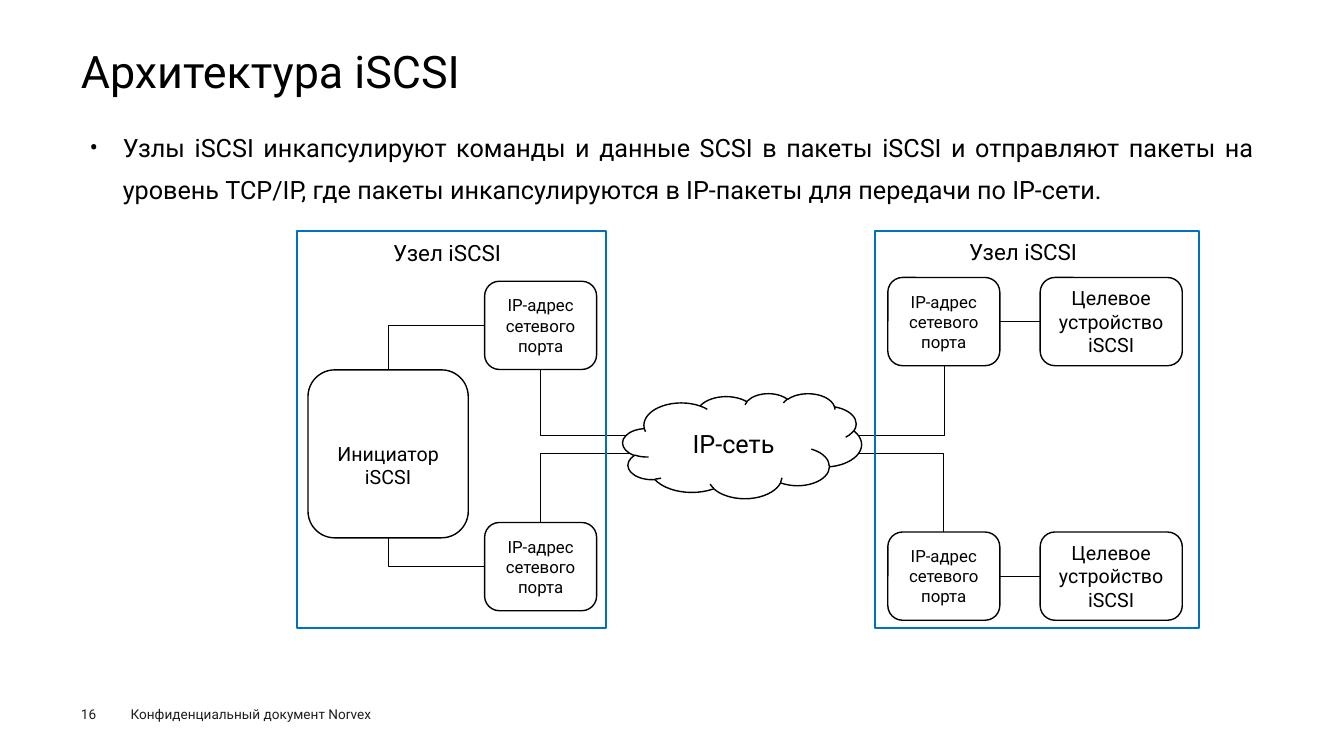
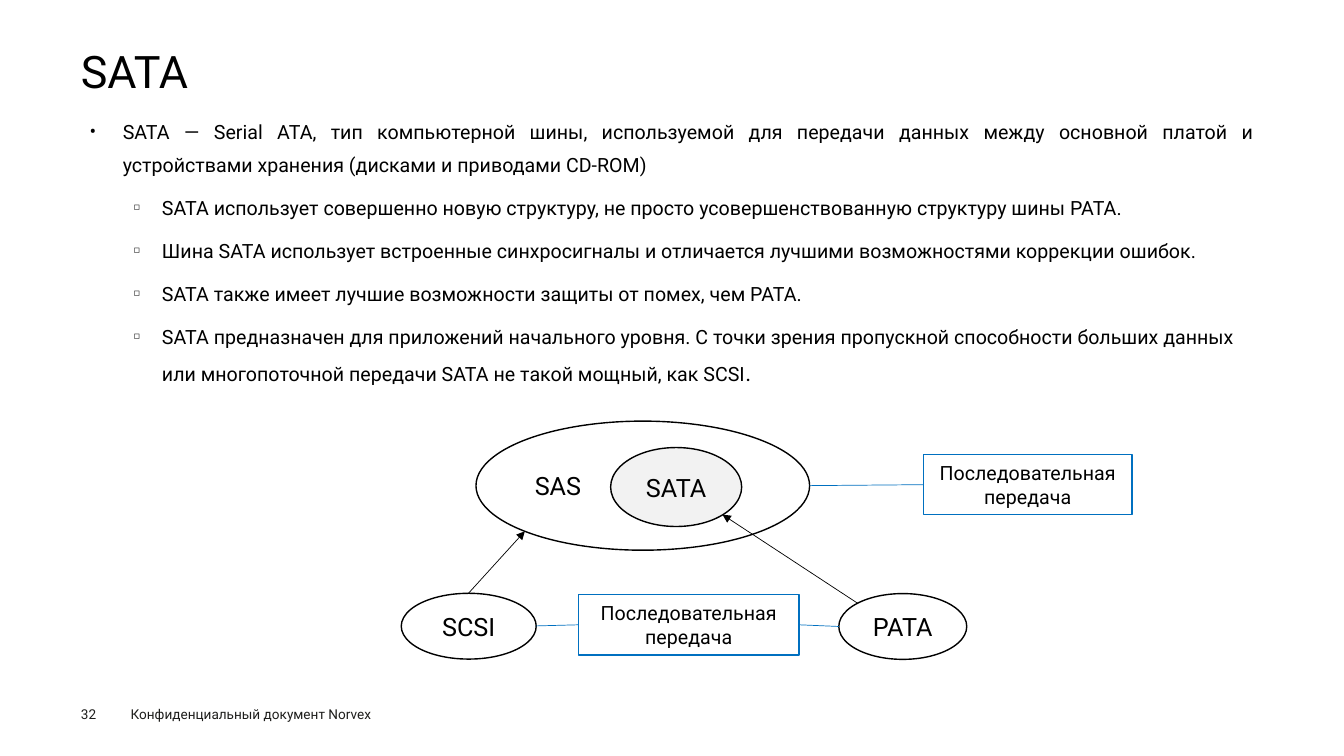
from lxml.etree import SubElement
from pptx import Presentation
from pptx.dml.color import RGBColor
from pptx.enum.shapes import MSO_CONNECTOR as Connector, MSO_SHAPE as Preset
from pptx.enum.text import MSO_ANCHOR as Anchor, PP_ALIGN as Align
from pptx.oxml.ns import qn
from pptx.util import Pt

FONT = "Roboto"
BLACK, BLUE, WHITE, PALE, FOOTER_INK = "000000", "0070C0", "FFFFFF", "F2F2F2", "1D1D1B"
FOOTER = "Конфиденциальный документ Norvex"
# Bullet levels: left margin, hanging indent, character, size in %, space before, alignment
LEVELS = [
    (23.6, 23.6, "•", 100, 7.9, Align.JUSTIFY),
    (51.6, 20, "◻", 50, 7.2, Align.LEFT),
]


def color(value):
    return RGBColor.from_string(value)


class Slides:
    """Holds the deck style and the current slide."""

    def __init__(self):
        self.deck = Presentation()
        self.deck.slide_width, self.deck.slide_height = Pt(960), Pt(540)
        self.page = None

    def style(self, span, size, ink=BLACK):
        span.font.name, span.font.size = FONT, Pt(size)
        span.font.color.rgb = color(ink)

    def fill_text(self, frame, text, size, ink=BLACK, align=Align.LEFT,
                  anchor=Anchor.TOP, insets=(7.2, 3.6, 7.2, 3.6), wrap=True):
        frame.text = text
        frame.word_wrap, frame.vertical_anchor = wrap, anchor
        (frame.margin_left, frame.margin_top,
         frame.margin_right, frame.margin_bottom) = map(Pt, insets)
        for para in frame.paragraphs:
            para.alignment = align
            for span in para.runs:
                self.style(span, size, ink)

    def new_page(self, title, number):
        self.page = self.deck.slides.add_slide(self.deck.slide_layouts[5])
        head = self.page.shapes.title
        head.left, head.top, head.width, head.height = map(Pt, (57.8, 35.3, 844.5, 39))
        self.fill_text(head.text_frame, title, 32, insets=(0,) * 4)
        head.text_frame.paragraphs[0].line_spacing = 0.9
        self.text((57.8, 504, 40, 11.5), str(number), 9.7, FOOTER_INK, insets=(0,) * 4)
        self.text((86.2, 500.4, 199.5, 18.7), FOOTER, 9.7, FOOTER_INK)

    def text(self, at, text, size, ink=BLACK, **options):
        box = self.page.shapes.add_textbox(*map(Pt, at))
        self.fill_text(box.text_frame, text, size, ink, wrap=False, **options)

    def bullets(self, at, items, size):
        box = self.page.shapes.add_textbox(*map(Pt, at))
        frame = box.text_frame
        self.fill_text(frame, "\n".join(text for _, text in items), size,
                       insets=(6.5, 2.9, 6.5, 2.9))
        for index, (para, (level, _)) in enumerate(zip(frame.paragraphs, items)):
            margin, hanging, mark, percent, gap, align = LEVELS[level]
            props = para._p.get_or_add_pPr()
            props.set("marL", str(Pt(margin)))
            props.set("indent", str(-Pt(hanging)))
            SubElement(props, qn("a:buSzPct")).set("val", str(percent * 1000))
            SubElement(props, qn("a:buFont")).set("typeface", FONT)
            SubElement(props, qn("a:buChar")).set("char", mark)
            para.level, para.alignment, para.line_spacing = level, align, 1.4
            if index:
                para.space_before = Pt(gap)
        return frame

    def shape(self, preset, at, text="", size=14, fill=None, line=BLACK, width=1,
              align=Align.CENTER, **options):
        shape = self.page.shapes.add_shape(preset, *map(Pt, at))
        shape.shadow.inherit = False
        if fill:
            shape.fill.solid()
            shape.fill.fore_color.rgb = color(fill)
        else:
            shape.fill.background()
        shape.line.color.rgb, shape.line.width = color(line), Pt(width)
        if text:
            self.fill_text(shape.text_frame, text, size, align=align,
                           anchor=Anchor.MIDDLE, **options)

    def line(self, start, end, ink=BLACK, arrow=False, kind=Connector.STRAIGHT):
        line = self.page.shapes.add_connector(kind, *map(Pt, start + end))
        line.line.color.rgb, line.line.width = color(ink), Pt(0.5)
        if arrow:
            SubElement(line.line._get_or_add_ln(), qn("a:tailEnd")).set("type", "triangle")
        SubElement(line._element.spPr, qn("a:effectLst"))
        return line

    def elbow(self, start, end, turn, flip=None, bus_y=None):
        """One bend, or two bends by way of the height bus_y."""
        (x1, y1), (x2, y2) = start, end
        width, height = abs(x2 - x1), abs(y2 - y1)
        if turn in (90, 270):
            width, height = height, width
        left, top = (x1 + x2 - width) / 2, (y1 + y2 - height) / 2
        line = self.line((left, top), (left + width, top + height), kind=Connector.ELBOW)
        props = line._element.spPr
        frame, geometry = props.find(qn("a:xfrm")), props.find(qn("a:prstGeom"))
        frame.set("rot", str(turn * 60000))
        if flip:
            frame.set(flip, "1")
        if bus_y is None:
            geometry.set("prst", "bentConnector2")
        else:
            guide = SubElement(geometry.find(qn("a:avLst")), qn("a:gd"))
            guide.set("name", "adj1")
            guide.set("fmla", f"val {round((bus_y - y1) / (y2 - y1) * 100000)}")


def iscsi_page(slides):
    slides.new_page("Архитектура iSCSI", 16)
    slides.bullets((57.6, 83, 844.7, 70), [
        (0, "Узлы iSCSI инкапсулируют команды и данные SCSI в пакеты iSCSI и отправляют "
            "пакеты на уровень TCP/IP, где пакеты инкапсулируются в IP-пакеты для "
            "передачи по IP-сети."),
    ], 18)

    # Initiator, its text lowered by one line
    slides.shape(Preset.ROUNDED_RECTANGLE, (220, 264.2, 114.5, 120),
                 "Инициатор\niSCSI", insets=(7.2, 20, 7.2, 3.6))

    # Ports and targets, upper and lower row
    port_width, port_height = 80, 63
    left_x, right_x, target_x, initiator_x = 346.2, 634.2, 743, 277.3
    left_tops, right_tops = (200.9, 373.2), (198.2, 380)
    for left_y, right_y in zip(left_tops, right_tops):
        for x, y in ((left_x, left_y), (right_x, right_y)):
            slides.shape(Preset.ROUNDED_RECTANGLE, (x, y, port_width, port_height),
                         "IP-адрес сетевого порта", 12, insets=(2.9, 3.6, 2.9, 3.6))
        slides.shape(Preset.ROUNDED_RECTANGLE, (target_x, right_y, 101.5, port_height),
                     "Целевое устройство iSCSI")
        center_y = right_y + port_height / 2
        slides.line((target_x, center_y), (right_x + port_width, center_y))

    # Paths from the initiator to its ports and between the nodes
    left_middle, right_middle = left_x + port_width / 2, right_x + port_width / 2
    upper_left, lower_left = left_tops
    upper_right, lower_right = right_tops
    slides.elbow((initiator_x, 384.2), (left_x, lower_left + port_height / 2), 270, "flipH")
    slides.elbow((left_x, upper_left + port_height / 2), (initiator_x, 264.2), 180, "flipV")
    slides.elbow((right_middle, upper_right + port_height),
                 (left_middle, upper_left + port_height), 90, bus_y=311)
    slides.elbow((left_middle, lower_left), (right_middle, lower_right), 270, "flipH",
                 bus_y=324)

    # Network and node frames
    slides.shape(Preset.CLOUD, (444.8, 281, 170.6, 75), "IP-сеть", 18, WHITE)
    for x, width, label_x, label_y in ((212, 221, 273.8, 167), (624.8, 232, 685.2, 166.3)):
        slides.text((label_x, label_y, 97.2, 26.6), "Узел iSCSI", 16)
        slides.shape(Preset.RECTANGLE, (x, 165.2, width, 283.2), line=BLUE, width=1.5)


def sata_page(slides):
    slides.new_page("SATA", 32)
    frame = slides.bullets((57.6, 76, 844.7, 210), [
        (0, "SATA — Serial ATA, тип компьютерной шины, используемой для передачи данных "
            "между основной платой и устройствами хранения (дисками и приводами CD-ROM)"),
        (1, "SATA использует совершенно новую структуру, не просто усовершенствованную "
            "структуру шины PATA."),
        (1, "Шина SATA использует встроенные синхросигналы и отличается лучшими "
            "возможностями коррекции ошибок."),
        (1, "SATA также имеет лучшие возможности защиты от помех, чем PATA."),
        (1, "SATA предназначен для приложений начального уровня. С точки зрения пропускной "
            "способности больших данных или многопоточной передачи SATA не такой мощный, "
            "как SCSI"),
    ], 14)
    period = frame.paragraphs[-1].add_run()
    period.text = "."
    slides.style(period, 16)

    # Interfaces
    for name, at, fill, align in (
        ("SAS", (340, 300.8, 238.3, 92.2), None, Align.LEFT),
        ("SATA", (436.2, 319.7, 93.6, 56.4), PALE, Align.CENTER),
        ("SCSI", (286.6, 423.8, 96.4, 47), WHITE, Align.CENTER),
        ("PATA", (599.2, 424, 91.4, 47), WHITE, Align.CENTER),
    ):
        slides.shape(Preset.OVAL, at, name, 18, fill, align=align)

    # Callouts and their leaders
    for at in ((659.5, 324.7, 149.2, 43), (413.2, 424.8, 157.5, 43)):
        slides.shape(Preset.RECTANGLE, at, "Последовательная передача", line=BLUE)
    for start, end in (
        ((578.3, 346.9), (659.5, 346.2)),
        ((383, 447.1), (413.2, 446.3)),
        ((570.7, 446.3), (599.2, 447.5)),
    ):
        slides.line(start, end, ink=BLUE)

    # Evolution arrows
    slides.line((334.8, 423.6), (374.9, 379.5), arrow=True)
    slides.line((612.6, 430.9), (516.1, 367.6), arrow=True)


def main():
    slides = Slides()
    iscsi_page(slides)
    sata_page(slides)
    slides.deck.save("out.pptx")


if __name__ == "__main__":
    main()
